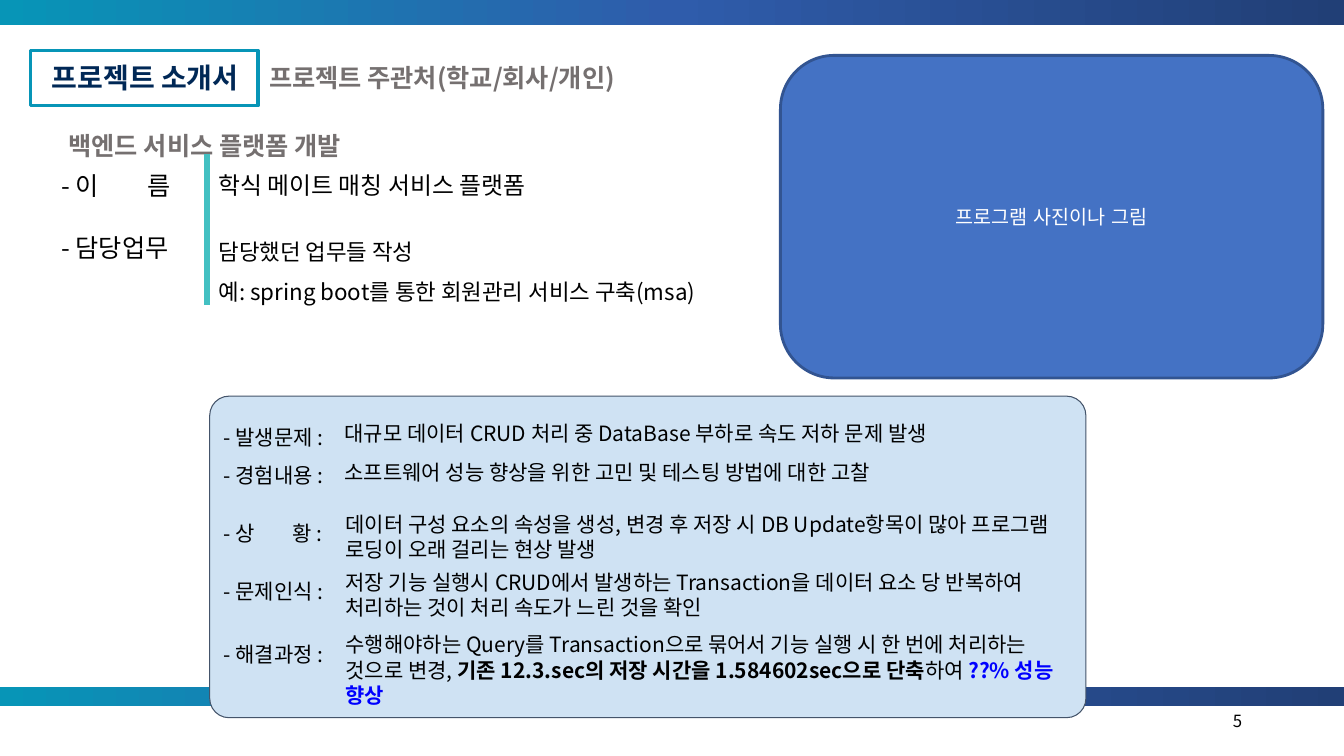
from pptx import Presentation
from pptx.dml.color import RGBColor
from pptx.enum.shapes import MSO_CONNECTOR, MSO_SHAPE
from pptx.enum.text import MSO_ANCHOR, MSO_AUTO_SIZE, PP_ALIGN
from pptx.oxml.ns import qn
from pptx.util import Pt
from lxml.etree import SubElement

PX = 9144  # 100 px to the inch
FONT = "Noto Sans CJK KR"
BLACK = RGBColor(0x00, 0x00, 0x00)
WHITE = RGBColor(0xFF, 0xFF, 0xFF)
GRAY = RGBColor(0x75, 0x70, 0x70)
NAVY = RGBColor(0x00, 0x28, 0x56)
TEAL = RGBColor(0x07, 0x95, 0xB7)
ROYAL = RGBColor(0x2F, 0x5C, 0xAB)
DEEP = RGBColor(0x21, 0x3F, 0x76)
MINT = RGBColor(0x43, 0xC0, 0xC2)
PALE = RGBColor(0xCF, 0xE2, 0xF3)
SLATE = RGBColor(0x44, 0x54, 0x6A)
BLUE = RGBColor(0x44, 0x72, 0xC4)
EDGE = RGBColor(0x32, 0x54, 0x91)
BRIGHT = RGBColor(0x00, 0x00, 0xFF)


class Page:
    def __init__(self, deck):
        self.slide = deck.slides.add_slide(deck.slide_layouts[1])
        self.shapes = self.slide.shapes

    def letter(self, shape, lines, size, color=BLACK, bold=False, pad=10,
               align=PP_ALIGN.LEFT, anchor=MSO_ANCHOR.TOP, gaps=(), tab=0,
               font=FONT):
        """Each line is a string or a list of (text, bold, color) runs."""
        frame = shape.text_frame
        frame.word_wrap = True
        frame.auto_size = MSO_AUTO_SIZE.NONE
        frame.vertical_anchor = anchor
        frame.margin_left = frame.margin_right = 10 * PX
        frame.margin_top = frame.margin_bottom = pad * PX
        for i, line in enumerate(lines):
            para = frame.add_paragraph() if i else frame.paragraphs[0]
            para.alignment = align
            para.space_before = Pt(0)
            para.line_spacing = gaps[i] if gaps else 1.0
            para.font.name = font
            para.font.size = Pt(size)
            para.font.bold = bold
            para.font.color.rgb = color
            if isinstance(line, str):
                para.add_run().text = line
                continue
            for text, heavy, tint in line:
                run = para.add_run()
                run.text = text
                run.font.bold = heavy
                run.font.color.rgb = tint
        for props in shape.element.iter(qn("a:pPr")):
            base = props.find(qn("a:defRPr"))
            SubElement(base, qn("a:ea"), typeface=font)
            if tab:
                tabs = SubElement(props, qn("a:tabLst"))
                SubElement(tabs, qn("a:tab"), pos=str(tab * PX), algn="l")
                base.addprevious(tabs)

    def place(self, shape, box):
        shape.left, shape.top, shape.width, shape.height = (
            n * PX for n in box)

    def title(self, box, text, **style):
        self.place(self.shapes.title, box)
        self.letter(self.shapes.title, [text], **style)

    def body(self, box, text, **style):
        shape = self.slide.placeholders[1]
        self.place(shape, box)
        self.letter(shape, [text], **style)
        for props in shape.element.iter(qn("a:pPr")):
            props.set("marL", "0")
            props.set("indent", "0")
            props.find(qn("a:defRPr")).addprevious(
                SubElement(props, qn("a:buNone")))

    def text(self, box, lines, size, **style):
        shape = self.shapes.add_textbox(*(n * PX for n in box))
        self.letter(shape, lines, size, **style)

    def block(self, box, kind=MSO_SHAPE.RECTANGLE, fill=None, line=None,
              width=1):
        shape = self.shapes.add_shape(kind, *(n * PX for n in box))
        shape.shadow.inherit = False
        if fill is None:
            shape.fill.background()
        else:
            shape.fill.solid()
            shape.fill.fore_color.rgb = fill
        if line is None:
            shape.line.fill.background()
        else:
            shape.line.color.rgb = line
            shape.line.width = Pt(width)
        return shape

    def band(self, box):
        shape = self.block(box)
        shape.fill.gradient()
        shape.fill.gradient_angle = 0
        stops = next(shape.element.iter(qn("a:gsLst")))
        for stop in list(stops):
            stops.remove(stop)
        for i, color in enumerate((TEAL, ROYAL, DEEP)):
            stop = SubElement(stops, qn("a:gs"), pos=str(i * 50000))
            SubElement(stop, qn("a:srgbClr"), val=str(color))

    def rule(self, x, top, end, color, width):
        line = self.shapes.add_connector(
            MSO_CONNECTOR.STRAIGHT, x * PX, top * PX, x * PX, end * PX)
        line.line.color.rgb = color
        line.line.width = Pt(width)
        SubElement(line.element.spPr, qn("a:effectLst"))


def main():
    deck = Presentation()
    deck.slide_width, deck.slide_height = 1333 * PX, 750 * PX
    page = Page(deck)

    # Top and bottom bands
    page.band((0, 0, 1333, 25))
    page.band((0, 682, 1333, 18))

    # Heading
    page.title((31, 55, 226, 44), "프로젝트 소개서", size=20, color=NAVY,
               bold=True, pad=5, align=PP_ALIGN.CENTER)
    page.block((30, 50, 226, 55), line=TEAL, width=2.25)
    page.text((257, 52, 462, 50), ["프로젝트 주관처(학교/회사/개인)"], 18,
              color=GRAY, bold=True)
    page.body((58, 109, 933, 40), "백엔드 서비스 플랫폼 개발", size=18,
              color=GRAY, bold=True, pad=5, anchor=MSO_ANCHOR.MIDDLE,
              gaps=[2.0])

    # Name and duties
    page.text((51, 159, 149, 50), ["- 이\t름"], 18, tab=85)
    page.text((51, 221, 149, 50), ["- 담당업무"], 18)
    page.rule(205, 153, 303, MINT, 4.5)
    page.text((207, 159, 560, 49), ["학식 메이트 매칭 서비스 플랫폼"], 17)
    page.text((207, 213, 550, 101),
              ["담당했던 업무들 작성",
               "예: spring boot를 통한 회원관리 서비스 구축(msa)"],
              16, gaps=[1.5, 1.5])

    # Problem panel
    panel = page.block((208, 393, 869, 319), MSO_SHAPE.ROUNDED_RECTANGLE,
                       PALE, SLATE, 0.75)
    panel.adjustments[0] = 0.06
    page.text((212, 399, 133, 275),
              ["- 발생문제 :", "- 경험내용 :", "- 상\t황 :",
               "- 문제인식 :", "- 해결과정 :"],
              15, gaps=[1.5, 1.5, 2.3, 2.3, 2.5], tab=68)
    notes = [
        ((332, 407, 685, 45),
         "대규모 데이터 CRUD 처리 중 DataBase 부하로 속도 저하 문제 발생"),
        ((332, 446, 610, 45),
         "소프트웨어 성능 향상을 위한 고민 및 테스팅 방법에 대한 고찰"),
        ((333, 497, 719, 71),
         "데이터 구성 요소의 속성을 생성, 변경 후 저장 시 DB Update항목이 많아 "
         "프로그램 로딩이 오래 걸리는 현상 발생"),
        ((333, 555, 701, 71),
         "저장 기능 실행시 CRUD에서 발생하는 Transaction을 데이터 요소 당 "
         "반복하여 처리하는 것이 처리 속도가 느린 것을 확인"),
        ((333, 617, 744, 96),
         [("수행해야하는 Query를 Transaction으로 묶어서 기능 실행 시 "
           "한 번에 처리하는 것으로 변경, ", False, BLACK),
          ("기존 12.3.sec의 저장 시간을 1.584602sec으로 단축", True, BLACK),
          ("하여 ", False, BLACK),
          ("??% 성능 향상", True, BRIGHT)]),
    ]
    for box, note in notes:
        page.text(box, [note], 15)

    # Picture area
    photo = page.block((774, 55, 538, 320), MSO_SHAPE.ROUNDED_RECTANGLE,
                       BLUE, EDGE, 2)
    page.letter(photo, ["프로그램 사진이나 그림"], 14, color=WHITE, pad=5,
                align=PP_ALIGN.CENTER, anchor=MSO_ANCHOR.MIDDLE, font="Arial")

    # Page number
    page.text((942, 695, 300, 40), ["5"], 12, pad=5, align=PP_ALIGN.RIGHT,
              anchor=MSO_ANCHOR.MIDDLE)

    deck.save("out.pptx")


if __name__ == "__main__":
    main()
